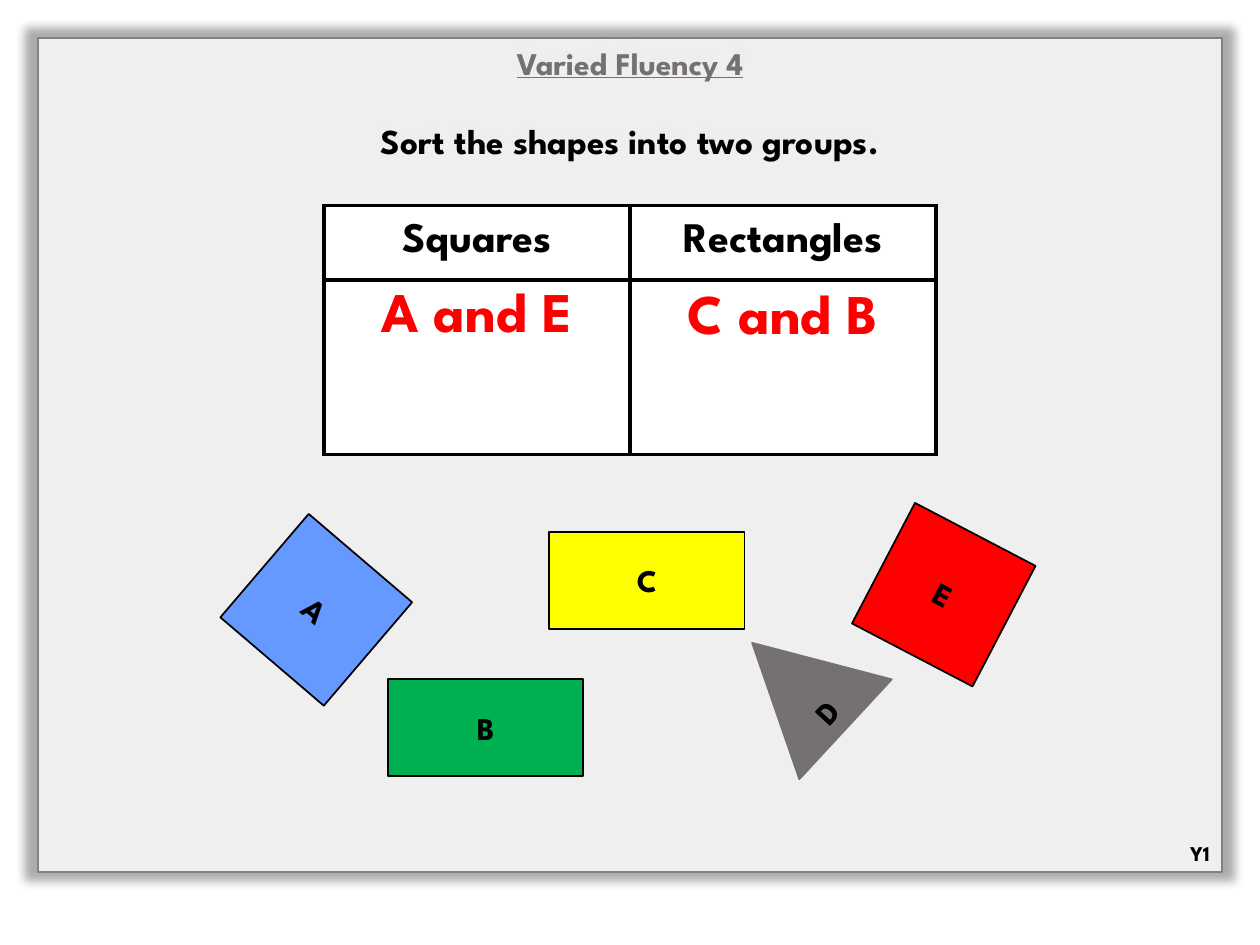
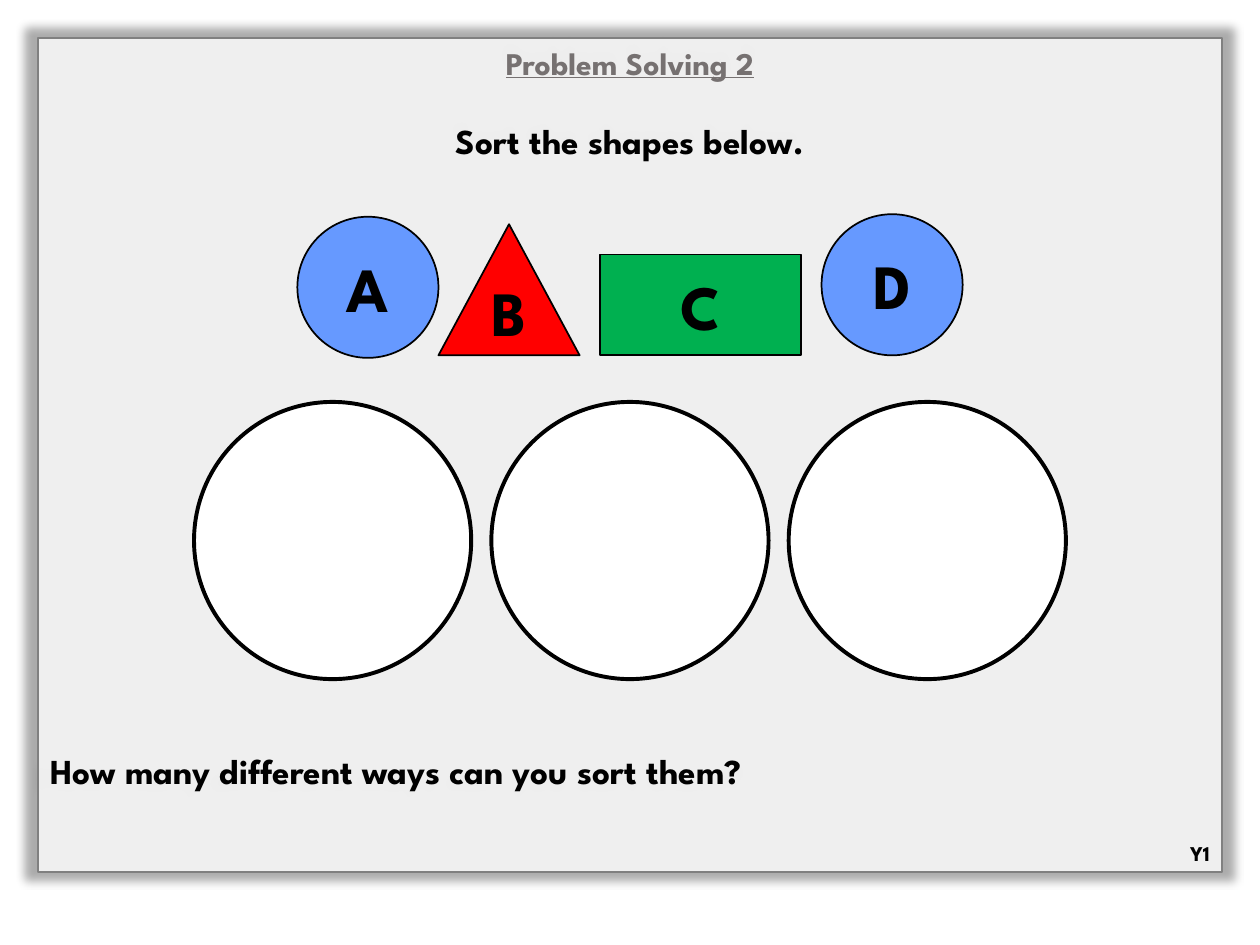
from dataclasses import dataclass

from lxml import etree
from pptx import Presentation
from pptx.dml.color import RGBColor
from pptx.enum.shapes import MSO_SHAPE
from pptx.enum.text import MSO_ANCHOR, PP_ALIGN
from pptx.oxml.ns import qn
from pptx.util import Inches, Pt

RECTANGLE = MSO_SHAPE.RECTANGLE
TRIANGLE = MSO_SHAPE.ISOSCELES_TRIANGLE
OVAL = MSO_SHAPE.OVAL
LEFT, CENTER, RIGHT = PP_ALIGN.LEFT, PP_ALIGN.CENTER, PP_ALIGN.RIGHT
TOP, MIDDLE, BOTTOM = MSO_ANCHOR.TOP, MSO_ANCHOR.MIDDLE, MSO_ANCHOR.BOTTOM


@dataclass(frozen=True)
class Theme:
    font: str = "League Spartan"
    black: str = "000000"
    white: str = "FFFFFF"
    grey: str = "767171"
    edge: str = "808080"
    red: str = "FF0000"
    blue: str = "6699FF"
    yellow: str = "FFFF00"
    green: str = "00B050"
    footer_size: int = 12
    title_size: int = 18
    task_size: int = 20
    header_size: int = 24
    answer_size: int = 32
    small_letter: int = 18
    large_letter: int = 36
    thin: float = 1
    thick: float = 2.25
    line_height: float = 1.2


THEME = Theme()

# The slide is a grid of 100 columns by 75 rows
COLUMNS, ROWS = 100, 75
CELL = Inches(10) // COLUMNS


@dataclass(frozen=True)
class Box:
    """An area of the slide, in grid columns and rows."""
    left: float
    top: float
    width: float
    height: float

    def inner(self, left, top, width, height):
        return Box(self.left + left, self.top + top, width, height)

    def lengths(self):
        return [round(value * CELL)
                for value in (self.left, self.top, self.width, self.height)]


PANEL = Box(3, 3, 94, 66.2)
FOOTER = Box(92.5, 66.2, 4.5, 3)
TABLE = Box(25.7, 16.3, 48.6, 19.8)
LOOSE_SHAPES = Box(19.7, 41.8, 60.6, 19.8)
SHAPE_ROW = Box(23.6, 17, 52.8, 11.4)
SORTING_CIRCLES = Box(15.4, 31.9, 69.2, 22)


def color(value):
    return RGBColor.from_string(value)


def add_element(parent, tag, **attributes):
    return etree.SubElement(parent, qn(tag), attributes)


def format_paragraph(paragraph, size, text_color=THEME.black, align=CENTER,
                     underline=False):
    paragraph.alignment = align
    for run in paragraph.runs:
        font = run.font
        font.name, font.size, font.bold = THEME.font, Pt(size), True
        font.underline = underline
        font.color.rgb = color(text_color)


def add_outlined(slide, kind, box, fill, line=THEME.black, width=THEME.thin):
    shape = slide.shapes.add_shape(kind, *box.lengths())
    shape.shadow.inherit = False
    shape.fill.solid()
    shape.fill.fore_color.rgb = color(fill)
    shape.line.color.rgb = color(line)
    shape.line.width = Pt(width)
    return shape


def add_panel(slide, box, title, task, question=None):
    panel = add_outlined(slide, RECTANGLE, box, THEME.white, THEME.edge)

    # Translucent fill and a slightly enlarged, centred shadow
    fill_color = panel.fill._xPr.find(qn("a:solidFill"))[0]
    add_element(fill_color, "a:alpha", val="82000")
    effects = panel.element.spPr.find(qn("a:effectLst"))
    shadow = add_element(effects, "a:outerShdw", blurRad=str(Pt(5)),
                         sx="102000", sy="102000", algn="ctr", rotWithShape="0")
    shadow_color = add_element(shadow, "a:srgbClr", val=THEME.black)
    add_element(shadow_color, "a:alpha", val="40000")

    # Title, task and closing question
    frame = panel.text_frame
    frame.word_wrap = True
    frame.vertical_anchor = TOP
    frame.text = "\n".join(text for text in (title, task, question) if text)
    heading, instruction, *closing = frame.paragraphs
    format_paragraph(heading, THEME.title_size, THEME.grey, underline=True)
    format_paragraph(instruction, THEME.task_size)
    instruction.space_before = Pt(THEME.title_size * THEME.line_height)
    for paragraph in closing:
        format_paragraph(paragraph, THEME.task_size, align=LEFT)
        paragraph.space_before = Pt(14 * THEME.task_size * THEME.line_height)


def add_footer(slide, box):
    text_box = slide.shapes.add_textbox(*box.lengths())
    frame = text_box.text_frame
    frame.word_wrap = True
    frame.text = "Y1"
    format_paragraph(frame.paragraphs[0], THEME.footer_size, align=RIGHT)


def add_borders(cell):
    properties = cell._tc.get_or_add_tcPr()
    for index, side in enumerate(("a:lnL", "a:lnR", "a:lnT", "a:lnB")):
        border = etree.Element(qn(side), w=str(Pt(THEME.thick)))
        fill = add_element(border, "a:solidFill")
        add_element(fill, "a:srgbClr", val=THEME.black)
        properties.insert(index, border)


def add_sorting_table(slide, box, groups):
    """Each group is a heading, its answer and the answer's top margin."""
    frame = slide.shapes.add_table(2, len(groups), *box.lengths())
    table = frame.table
    table.first_row = table.horz_banding = False
    for row, share in zip(table.rows, (0.3, 0.7)):
        row.height = round(box.height * share * CELL)
    for column, (heading, answer, margin) in enumerate(groups):
        header_cell, answer_cell = table.cell(0, column), table.cell(1, column)
        header_cell.text, answer_cell.text = heading, answer
        header_cell.vertical_anchor = MIDDLE
        answer_cell.margin_top = Inches(margin)
        format_paragraph(header_cell.text_frame.paragraphs[0],
                         THEME.header_size)
        format_paragraph(answer_cell.text_frame.paragraphs[0],
                         THEME.answer_size, THEME.red)
        for cell in (header_cell, answer_cell):
            cell.fill.solid()
            cell.fill.fore_color.rgb = color(THEME.white)
            add_borders(cell)


def add_lettered_shapes(slide, box, size, items):
    """Each item is letter, kind, place in the box, fill, line, rotation."""
    for letter, kind, place, fill, line, rotation in items:
        shape = add_outlined(slide, kind, box.inner(*place), fill, line)
        shape.rotation = rotation
        frame = shape.text_frame
        frame.text = letter
        frame.vertical_anchor = BOTTOM if kind == TRIANGLE else MIDDLE
        format_paragraph(frame.paragraphs[0], size)


def add_sorting_circles(slide, box, count=3):
    diameter = box.height
    step = (box.width - diameter) / (count - 1)
    for index in range(count):
        place = box.inner(index * step, 0, diameter, diameter)
        add_outlined(slide, OVAL, place, THEME.white, width=THEME.thick)


def add_blank_slide(presentation):
    return presentation.slides.add_slide(presentation.slide_layouts[6])


def build_fluency_slide(presentation):
    slide = add_blank_slide(presentation)
    add_panel(slide, PANEL, "Varied Fluency 4",
              "Sort the shapes into two groups.")
    add_sorting_table(slide, TABLE, [("Squares", "A and E", 0.1),
                                     ("Rectangles", "C and B", 0.12)])
    black, grey = THEME.black, THEME.grey
    add_lettered_shapes(slide, LOOSE_SHAPES, THEME.small_letter, [
        ("D", TRIANGLE, (38.3, 7.6, 10.8, 10.1), grey, grey, 312.8),
        ("E", RECTANGLE, (49.8, 0, 10.8, 10.8), THEME.red, black, 27.6),
        ("A", RECTANGLE, (0, 1.2, 10.8, 10.8), THEME.blue, black, 40.5),
        ("C", RECTANGLE, (23.9, 0.4, 15.5, 7.7), THEME.yellow, black, 0),
        ("B", RECTANGLE, (11.1, 12.1, 15.5, 7.7), THEME.green, black, 0),
    ])
    add_footer(slide, FOOTER)


def build_problem_slide(presentation):
    slide = add_blank_slide(presentation)
    add_panel(slide, PANEL, "Problem Solving 2", "Sort the shapes below.",
              "How many different ways can you sort them?")
    add_sorting_circles(slide, SORTING_CIRCLES)
    black = THEME.black
    add_lettered_shapes(slide, SHAPE_ROW, THEME.large_letter, [
        ("C", RECTANGLE, (24, 3.2, 16, 8), THEME.green, black, 0),
        ("B", TRIANGLE, (11.2, 0.8, 11.2, 10.4), THEME.red, black, 0),
        ("D", OVAL, (41.6, 0, 11.2, 11.2), THEME.blue, black, 0),
        ("A", OVAL, (0, 0.2, 11.2, 11.2), THEME.blue, black, 0),
    ])
    add_footer(slide, FOOTER)


def main():
    presentation = Presentation()
    presentation.slide_width = COLUMNS * CELL
    presentation.slide_height = ROWS * CELL
    build_fluency_slide(presentation)
    build_problem_slide(presentation)
    presentation.save("out.pptx")


if __name__ == "__main__":
    main()
